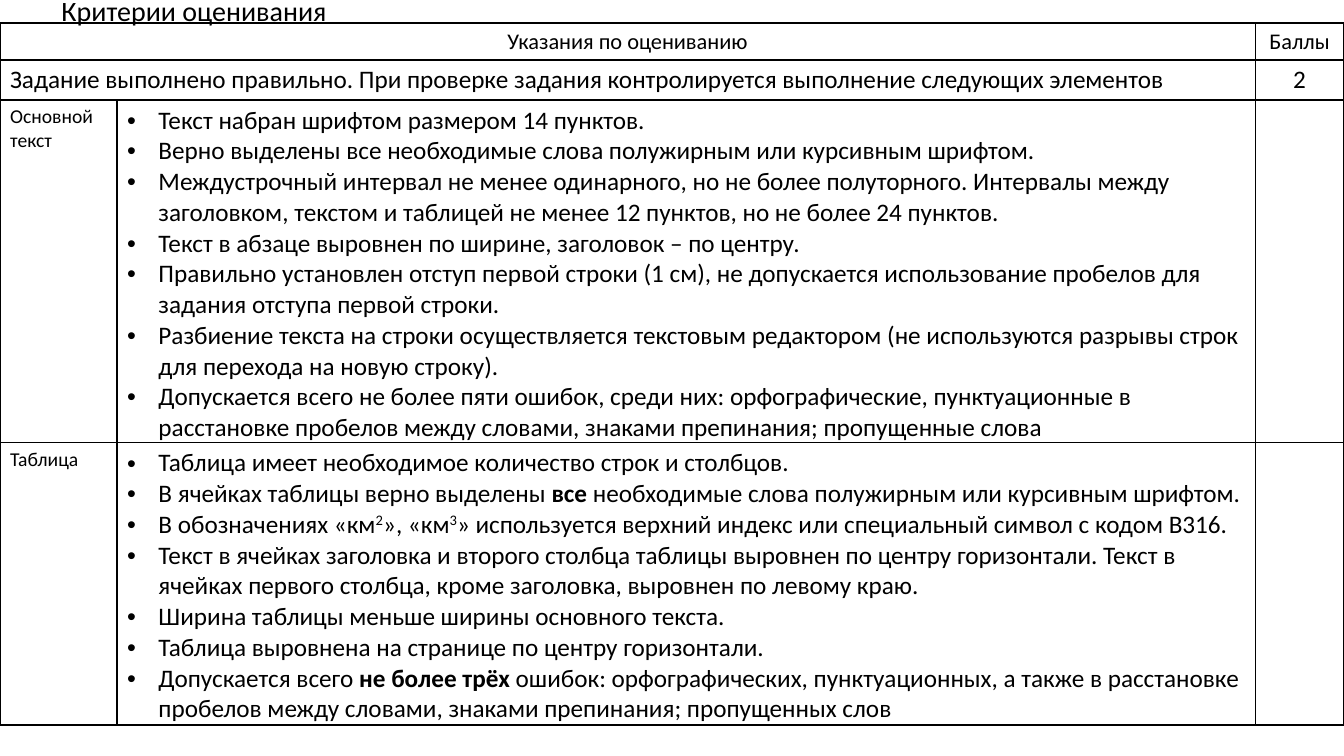
"""Builds the slide with the grading criteria table."""
from lxml.etree import SubElement
from pptx import Presentation
from pptx.dml.color import RGBColor
from pptx.enum.text import PP_ALIGN
from pptx.oxml.ns import qn
from pptx.util import Cm, Pt

TITLE = "Критерии оценивания"
BOLD, RAISED = "bold", "raised"
TEXT_RULES = [
    "Текст набран шрифтом размером 14 пунктов.",
    "Верно выделены все необходимые слова полужирным или курсивным шрифтом.",
    "Междустрочный интервал не менее одинарного, но не более полуторного. Интервалы между "
    "заголовком, текстом и таблицей не менее 12 пунктов, но не более 24 пунктов.",
    "Текст в абзаце выровнен по ширине, заголовок – по центру.",
    "Правильно установлен отступ первой строки (1 см), не допускается использование пробелов "
    "для задания отступа первой строки.",
    "Разбиение текста на строки осуществляется текстовым редактором (не используются разрывы "
    "строк для перехода на новую строку).",
    "Допускается всего не более пяти ошибок, среди них: орфографические, пунктуационные в "
    "расстановке пробелов между словами, знаками препинания; пропущенные слова",
]
TABLE_RULES = [
    "Таблица имеет необходимое количество строк и столбцов.",
    ["В ячейках таблицы верно выделены ", ("все ", BOLD),
     "необходимые слова полужирным или курсивным шрифтом."],
    ["В обозначениях «км", ("2", RAISED), "», «км", ("3", RAISED),
     "» используется верхний индекс или специальный символ с кодом B316."],
    "Текст в ячейках заголовка и второго столбца таблицы выровнен по центру горизонтали. "
    "Текст в ячейках первого столбца, кроме заголовка, выровнен по левому краю.",
    "Ширина таблицы меньше ширины основного текста.",
    "Таблица выровнена на странице по центру горизонтали.",
    ["Допускается всего ", ("не более трёх ", BOLD),
     "ошибок: орфографических, пунктуационных, а также в расстановке пробелов между словами, "
     "знаками препинания; пропущенных слов"],
]
TASK = "Задание выполнено правильно. При проверке задания контролируется выполнение следующих элементов"
CELLS = [
    (0, 0, ["Указания по оцениванию"], 16, "center"),
    (0, 2, ["Баллы"], 16, "center"),
    (1, 0, [TASK], 18, "left"),
    (1, 2, ["2"], 18, "center"),
    (2, 0, ["Основной", "текст"], 14, "left"),
    (2, 1, TEXT_RULES, 18, "bullet"),
    (3, 0, ["Таблица"], 14, "left"),
    (3, 1, TABLE_RULES, 18, "bullet"),
]
COLUMN_WIDTHS = [2.95, 28.68, 2.24]
ROW_HEIGHTS = [0.93, 1.01, 8.64, 7.11]
TABLE_TOP = 0.58
BLACK = RGBColor(0, 0, 0)


def add_bullet(para):
    properties = para._p.get_or_add_pPr()
    properties.set("marL", str(Cm(0.79)))
    properties.set("indent", str(-Cm(0.79)))
    SubElement(properties, qn("a:buFont"), typeface="Arial")
    SubElement(properties, qn("a:buChar"), char="•")


def write(frame, lines, size, layout):
    for index, line in enumerate(lines):
        para = frame.add_paragraph() if index else frame.paragraphs[0]
        if layout == "bullet":
            add_bullet(para)
        para.alignment = PP_ALIGN.CENTER if layout == "center" else PP_ALIGN.LEFT
        para.font.name = "Calibri"
        para.font.size = Pt(size)
        para.font.color.rgb = BLACK
        for part in [line] if isinstance(line, str) else line:
            text, style = (part, None) if isinstance(part, str) else part
            span = para.add_run()
            span.text = text
            if style == BOLD:
                span.font.bold = True
            elif style == RAISED:
                span.font._element.set("baseline", "30000")


def format_cell(cell):
    cell.margin_bottom = 0
    properties = cell._tc.get_or_add_tcPr()
    for side in ("lnL", "lnR", "lnT", "lnB"):
        border = SubElement(properties, qn(f"a:{side}"), w=str(Pt(1)))
        fill = SubElement(border, qn("a:solidFill"))
        SubElement(fill, qn("a:srgbClr"), val=str(BLACK))
    cell.fill.background()


def main():
    deck = Presentation()
    deck.slide_width, deck.slide_height = Cm(33.87), Cm(19.05)
    page = deck.slides.add_slide(deck.slide_layouts[6])

    box = page.shapes.add_textbox(Cm(1.3), Cm(-0.3), Cm(7.42), Cm(1.11))
    box.text_frame.word_wrap = False
    write(box.text_frame, [TITLE], 20, "left")

    frame = page.shapes.add_table(
        len(ROW_HEIGHTS), len(COLUMN_WIDTHS), 0, Cm(TABLE_TOP),
        Cm(sum(COLUMN_WIDTHS)), Cm(sum(ROW_HEIGHTS)))
    table = frame.table
    table.first_row = table.horz_banding = False
    for column, width in zip(table.columns, COLUMN_WIDTHS):
        column.width = Cm(width)
    for row, height in zip(table.rows, ROW_HEIGHTS):
        row.height = Cm(height)
    for cell in table.iter_cells():
        format_cell(cell)
    for row in (0, 1):
        table.cell(row, 0).merge(table.cell(row, 1))
    for row, column, lines, size, layout in CELLS:
        write(table.cell(row, column).text_frame, lines, size, layout)

    deck.save("out.pptx")


if __name__ == "__main__":
    main()
